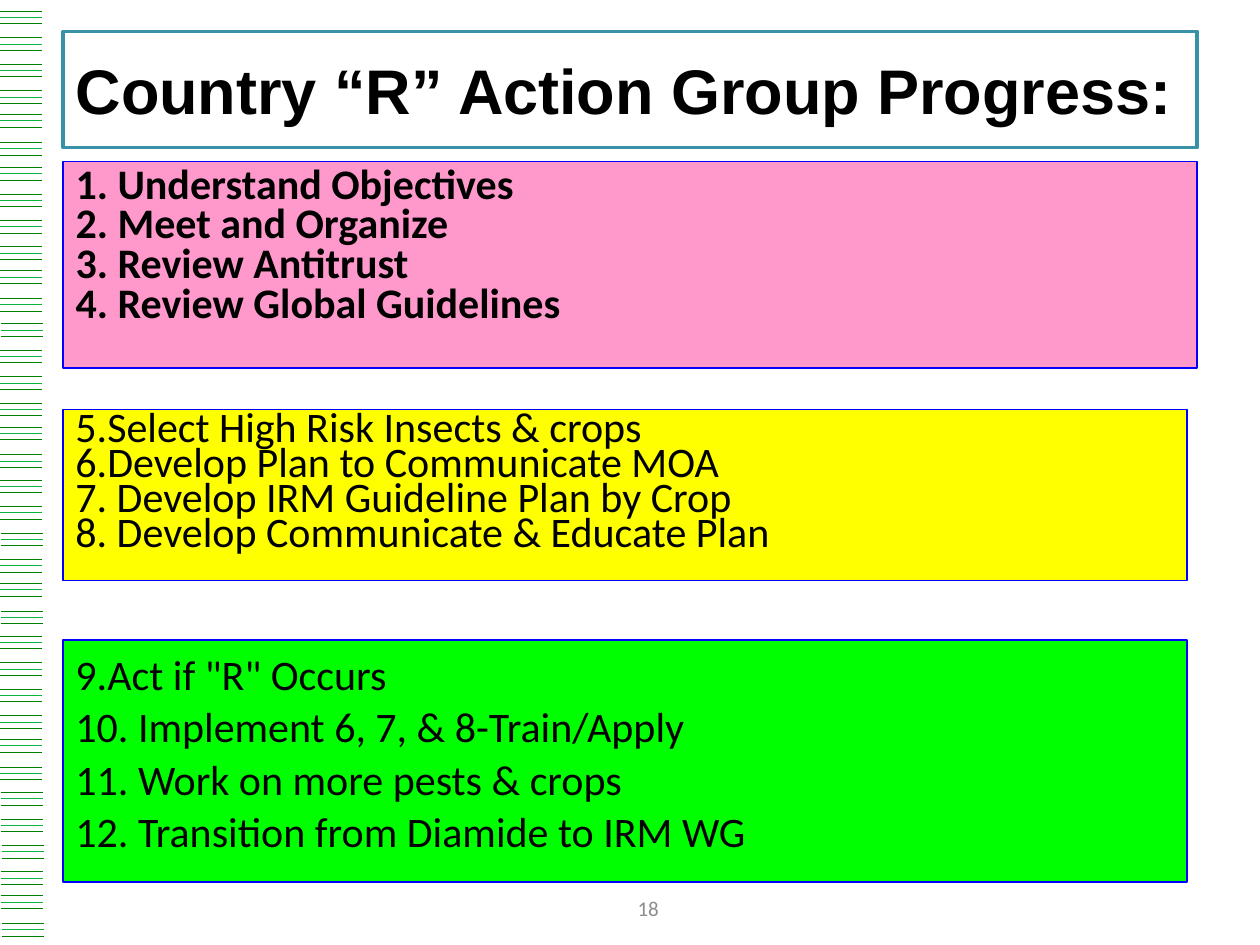
import pptx
import pptx.util
from lxml import etree
from pptx.dml.color import RGBColor
from pptx.enum.shapes import MSO_CONNECTOR, MSO_SHAPE
from pptx.enum.text import MSO_ANCHOR, MSO_AUTO_SIZE, PP_ALIGN
from pptx.oxml.ns import qn

Inches, Pt = pptx.util.Inches, pptx.util.Pt

BLACK = RGBColor(0x00, 0x00, 0x00)
WHITE = RGBColor(0xFF, 0xFF, 0xFF)
GREY = RGBColor(0x8C, 0x8C, 0x8C)
TEAL = RGBColor(0x38, 0x91, 0xA7)
BLUE = RGBColor(0x00, 0x00, 0xFF)
PINK = RGBColor(0xFF, 0x99, 0xCC)
YELLOW = RGBColor(0xFF, 0xFF, 0x00)
LIME = RGBColor(0x00, 0xFF, 0x00)
DARK_GREEN = RGBColor(0x00, 0x80, 0x00)
MID_GREEN = RGBColor(0x0A, 0xB4, 0x43)

TITLE = "Country “R” Action Group Progress:"
STARTED = ["1. Understand Objectives", "2. Meet and Organize",
           "3. Review Antitrust", "4. Review Global Guidelines"]
PLANNED = ["5.Select High Risk Insects & crops",
           "6.Develop Plan to Communicate MOA",
           "7. Develop IRM Guideline Plan by Crop",
           "8. Develop Communicate & Educate Plan"]
LATER = ["9.Act if \"R\" Occurs", "10. Implement 6, 7, & 8-Train/Apply",
         "11. Work on more pests & crops",
         "12. Transition from Diamide to IRM WG"]
PAGE = "18"

LEFT = 0.5
TITLE_BOX = (LEFT, 0.25, 9, 0.92)
STARTED_BOX = (LEFT, 1.28, 9, 1.64)
PLANNED_BOX = (LEFT, 3.25, 8.92, 1.36)
LATER_BOX = (LEFT, 5.08, 8.92, 1.92)
PAGE_BOX = (3.98, 7.01, 2.33, 0.4)

# Edge stripes: six triplets to a block, six blocks down the slide
STRIPE_TOP, STRIPE_WIDTH, BLOCK_PITCH = 0.09, 0.33, 1.24
TRIPLETS = [0, 0.21, 0.42, 0.63, 0.82, 1.04]
STRIPES = [(0, DARK_GREEN), (0.05, MID_GREEN), (0.1, DARK_GREEN)]
STRIPE_SHIFT = {12: 0.01, 20: 0.01, 23: 0.01, 30: 0.01, 31: 0.01,
                32: 0.02, 33: 0.01, 34: 0.01, 35: 0.02}


def place(s, box):
    for name, value in zip(("left", "top", "width", "height"), box):
        setattr(s, name, Inches(value))


def paint(s, fill, line, width):
    s.fill.solid()
    s.fill.fore_color.rgb = fill
    s.line.color.rgb = line
    s.line.width = Pt(width)


def write(s, lines, color=BLACK, anchor=MSO_ANCHOR.TOP, align=PP_ALIGN.LEFT,
          pitch=None, **font):
    """Put one paragraph per line, without bullets, pitch points apart."""
    tf = s.text_frame
    tf.word_wrap = True
    tf.auto_size = MSO_AUTO_SIZE.NONE
    tf.vertical_anchor = anchor
    tf.text = "\n".join(lines)
    for p in tf.paragraphs:
        pPr = p._p.get_or_add_pPr()
        pPr.set("marL", "0")
        pPr.set("indent", "0")
        etree.SubElement(pPr, qn("a:buNone"))
        p.alignment = align
        p.space_before = Pt(0)
        if pitch:
            p.line_spacing = Pt(pitch)
        for r in p.runs:
            r.font.color.rgb = color
            for name, value in font.items():
                setattr(r.font, name, value)


def draw_stripes(slide):
    for i in range(len(TRIPLETS) ** 2):
        block, row = divmod(i, len(TRIPLETS))
        top = STRIPE_TOP + block * BLOCK_PITCH + TRIPLETS[row]
        x = STRIPE_SHIFT.get(i, 0)
        for offset, color in STRIPES:
            y = Inches(top + offset)
            c = slide.shapes.add_connector(MSO_CONNECTOR.STRAIGHT, Inches(x), y,
                                           Inches(x + STRIPE_WIDTH), y)
            c.line.color.rgb = color
            c.line.width = Pt(0.5)
            etree.SubElement(c._element.spPr, qn("a:effectLst"))


def main():
    prs = pptx.Presentation()
    prs.slide_width, prs.slide_height = Inches(10), Inches(7.5)
    slide = prs.slides.add_slide(prs.slide_layouts[1])
    draw_stripes(slide)

    title, body = slide.shapes.title, slide.placeholders[1]
    place(title, TITLE_BOX)
    paint(title, WHITE, TEAL, 2)
    write(title, [TITLE], anchor=MSO_ANCHOR.MIDDLE,
          name="Arial", size=Pt(36), bold=True)

    place(body, STARTED_BOX)
    paint(body, PINK, BLUE, 0.75)
    write(body, STARTED, pitch=22.8, name="Calibri", size=Pt(24), bold=True)

    for lines, box, fill, pitch in ((PLANNED, PLANNED_BOX, YELLOW, 20),
                                    (LATER, LATER_BOX, LIME, 30)):
        s = slide.shapes.add_shape(MSO_SHAPE.RECTANGLE, *map(Inches, box))
        s.shadow.inherit = False
        paint(s, fill, BLUE, 0.75)
        write(s, lines, pitch=pitch, name="Calibri", size=Pt(24))

    page = slide.shapes.add_textbox(*map(Inches, PAGE_BOX))
    write(page, [PAGE], color=GREY, anchor=MSO_ANCHOR.MIDDLE,
          align=PP_ALIGN.CENTER, name="Calibri", size=Pt(12))
    prs.save("out.pptx")


if __name__ == "__main__":
    main()
